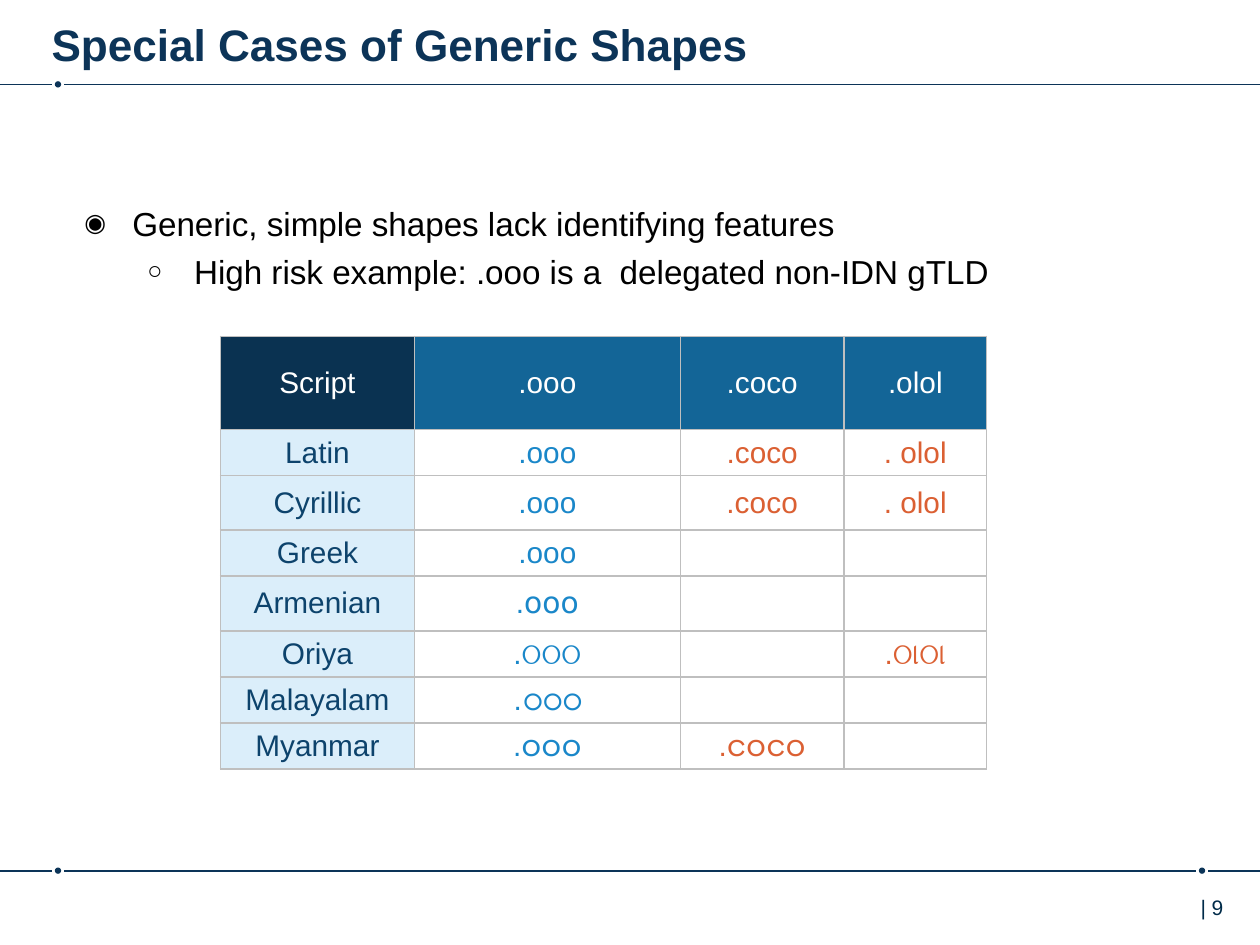
from lxml import etree
from pptx import Presentation
from pptx.dml.color import RGBColor
from pptx.enum.shapes import MSO_CONNECTOR, MSO_SHAPE
from pptx.enum.text import MSO_ANCHOR, PP_ALIGN
from pptx.oxml.ns import qn
from pptx.util import Inches, Pt

STRAIGHT = MSO_CONNECTOR.STRAIGHT
OVAL = MSO_SHAPE.OVAL
MIDDLE = MSO_ANCHOR.MIDDLE
LEFT, CENTER, RIGHT = PP_ALIGN.LEFT, PP_ALIGN.CENTER, PP_ALIGN.RIGHT

NAVY = RGBColor(0x0C, 0x34, 0x58)
PAGE_INK = RGBColor(0x00, 0x2B, 0x49)
BLACK = RGBColor(0, 0, 0)
WHITE = RGBColor(0xFF, 0xFF, 0xFF)
CORNER = RGBColor(0x0A, 0x32, 0x51)
HEADER = RGBColor(0x13, 0x65, 0x97)
SCRIPT_FILL = RGBColor(0xCD, 0xE8, 0xF9)
SCRIPT_INK = RGBColor(0x0D, 0x43, 0x6C)
BLUE = RGBColor(0x1A, 0x87, 0xC9)
ORANGE = RGBColor(0xDB, 0x60, 0x33)
GRID = RGBColor(0xBF, 0xBF, 0xBF)

FONT = "Arial"
TITLE = "Special Cases of Generic Shapes"
PAGE_NUMBER = "| 9"
BULLETS = [
    ("◉", "Generic, simple shapes lack identifying features", 0.38, 0.38, 0),
    ("○", "High risk example: .ooo is a  delegated non-IDN gTLD", 0.87, 0.37, 5),
]
ROWS = [
    ("Script", ".ooo", ".coco", ".olol"),
    ("Latin", ".ooo", ".coco", ". olol"),
    ("Cyrillic", ".ооо", ".сосо", ". оӏоӏ"),
    ("Greek", ".οοο", "", ""),
    ("Armenian", ".օօօ", "", ""),
    ("Oriya", ".ଠଠଠ", "", ".ଠାଠା"),
    ("Malayalam", ".ഠഠഠ", "", ""),
    ("Myanmar", ".ဝဝဝ", ".ငဝငဝ", ""),
]
COLUMN_WIDTHS = [1.54, 2.11, 1.3, 1.13]
ROW_HEIGHT = 0.365
TALL_ROWS = {0: 0.74, 2: 0.43, 4: 0.44}
HEADER_FILLS = [CORNER, HEADER, HEADER, HEADER]
BODY_FILLS = [SCRIPT_FILL, WHITE, WHITE, WHITE]
BODY_INKS = [SCRIPT_INK, BLUE, ORANGE, ORANGE]

DOT = 0.05
RULES = [
    (0.67, [0.46], [(0, 0.41), (0.51, 10)]),
    (6.91, [0.46, 9.54], [(0, 0.41), (0.51, 9.49), (9.59, 10)]),
]


def add_rule(page, y, dots, segments):
    for x in dots:
        dot = page.shapes.add_shape(OVAL, Inches(x - DOT / 2), Inches(y - DOT / 2),
                                    Inches(DOT), Inches(DOT))
        dot.shadow.inherit = False
        dot.fill.solid()
        dot.fill.fore_color.rgb = NAVY
        dot.line.fill.background()
    for start, end in segments:
        line = page.shapes.add_connector(STRAIGHT, Inches(start), Inches(y),
                                         Inches(end), Inches(y))
        line.line.color.rgb = NAVY
        line.line.width = Pt(1)
        etree.SubElement(line._element.spPr, qn("a:effectLst"))


def add_span(para, text, size, color, bold=False):
    span = para.add_run()
    span.text = text
    span.font.name = FONT
    span.font.size = Pt(size)
    span.font.bold = bold
    span.font.color.rgb = color


def add_box(page, left, top, width, height, inset=0):
    box = page.shapes.add_textbox(Inches(left), Inches(top), Inches(width), Inches(height))
    frame = box.text_frame
    frame.word_wrap = True
    frame.margin_left = frame.margin_right = frame.margin_bottom = 0
    frame.margin_top = Inches(inset)
    return frame


def add_bullet(para, mark, indent, hanging):
    properties = para._p.get_or_add_pPr()
    properties.set("marL", str(Inches(indent)))
    properties.set("indent", str(-Inches(hanging)))
    color = etree.SubElement(properties, qn("a:buClr"))
    etree.SubElement(color, qn("a:srgbClr"), val=str(BLACK))
    etree.SubElement(properties, qn("a:buSzPct"), val="75000")
    etree.SubElement(properties, qn("a:buFont"), typeface=FONT)
    etree.SubElement(properties, qn("a:buChar"), char=mark)


def style_cell(cell, fill, opacity):
    properties = cell._tc.get_or_add_tcPr()
    for side in ("lnL", "lnR", "lnT", "lnB"):
        border = etree.SubElement(properties, qn("a:" + side), w=str(Pt(1)))
        solid = etree.SubElement(border, qn("a:solidFill"))
        etree.SubElement(solid, qn("a:srgbClr"), val=str(GRID))
    cell.fill.solid()
    cell.fill.fore_color.rgb = fill
    if opacity < 100:
        color = properties.find(qn("a:solidFill")).find(qn("a:srgbClr"))
        etree.SubElement(color, qn("a:alpha"), val=str(opacity * 1000))
    cell.vertical_anchor = MIDDLE
    cell.margin_top = cell.margin_bottom = Inches(0.03)


def add_script_table(page):
    heights = [TALL_ROWS.get(index, ROW_HEIGHT) for index in range(len(ROWS))]
    table = page.shapes.add_table(len(ROWS), len(COLUMN_WIDTHS), Inches(1.75), Inches(2.67),
                                  Inches(sum(COLUMN_WIDTHS)), Inches(sum(heights))).table
    for column, width in zip(table.columns, COLUMN_WIDTHS):
        column.width = Inches(width)
    for index, (row, height, texts) in enumerate(zip(table.rows, heights, ROWS)):
        row.height = Inches(height)
        is_header = index == 0
        fills = HEADER_FILLS if is_header else BODY_FILLS
        inks = [WHITE] * len(texts) if is_header else BODY_INKS
        for cell, text, fill, ink in zip(row.cells, texts, fills, inks):
            style_cell(cell, fill, 100 if is_header else 70)
            if text:
                para = cell.text_frame.paragraphs[0]
                para.alignment = CENTER
                add_span(para, text, 17, ink)


def main():
    deck = Presentation()
    deck.slide_width, deck.slide_height = Inches(10), Inches(7.5)
    page = deck.slides.add_slide(deck.slide_layouts[6])

    for rule in RULES:
        add_rule(page, *rule)

    number = add_box(page, 9.2, 7.05, 0.51, 0.4, 0.05).paragraphs[0]
    number.alignment = RIGHT
    add_span(number, PAGE_NUMBER, 12, PAGE_INK)

    title = add_box(page, 0.41, 0.05, 8.76, 0.49, 0.09).paragraphs[0]
    title.alignment = LEFT
    add_span(title, TITLE, 25.2, NAVY, True)

    body = add_box(page, 0.67, 1.61, 8.65, 0.9)
    for index, (mark, text, indent, hanging, before) in enumerate(BULLETS):
        para = body.add_paragraph() if index else body.paragraphs[0]
        add_bullet(para, mark, indent, hanging)
        if before:
            para.space_before = Pt(before)
        add_span(para, text, 19, BLACK)

    add_script_table(page)
    deck.save("out.pptx")


if __name__ == "__main__":
    main()
